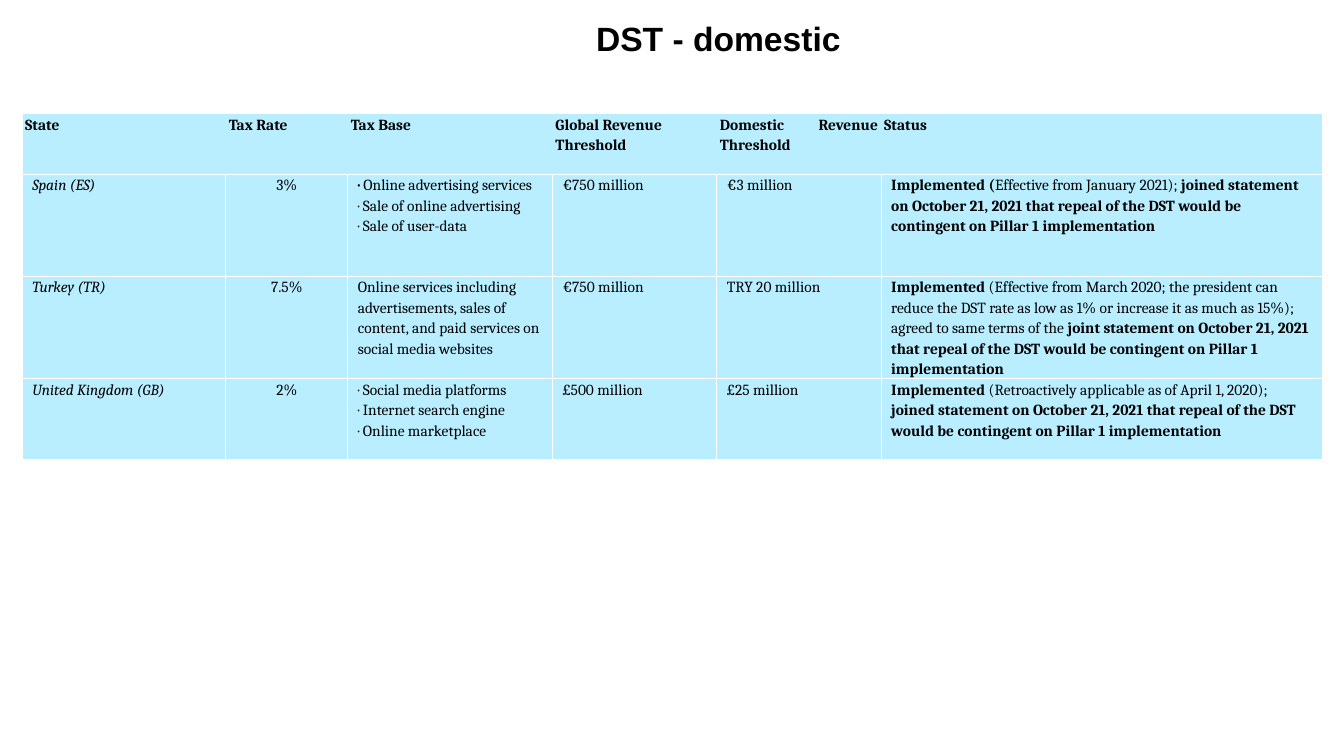
from dataclasses import dataclass

from lxml.etree import SubElement
from pptx import Presentation
from pptx.dml.color import RGBColor as Color
from pptx.enum.text import MSO_ANCHOR as Anchor, PP_ALIGN as Align
from pptx.oxml.ns import qn
from pptx.util import Inches, Pt


@dataclass(frozen=True)
class Theme:
    ink: str = "000000"
    fill: str = "B8EEFF"
    line: str = "FFFFFF"
    head: str = "Arial"
    body: str = "Cambria"
    big: int = 24
    small: int = 11


theme = Theme()


def style(run, font, size, bold, italic=False):
    run.font.name = font
    run.font.size = Pt(size)
    run.font.bold = bold
    run.font.italic = italic
    run.font.color.rgb = Color.from_string(theme.ink)


def border(cell, side, shown):
    line = SubElement(cell._tc.get_or_add_tcPr(), qn(f"a:ln{side}"), w=str(Pt(1)))
    if shown:
        solid = SubElement(line, qn("a:solidFill"))
        SubElement(solid, qn("a:srgbClr"), val=theme.line)
    else:
        SubElement(line, qn("a:noFill"))


prs = Presentation()
prs.slide_width, prs.slide_height = Inches(13.33), Inches(7.5)
slide = prs.slides.add_slide(prs.slide_layouts[5])

title = slide.shapes.title
title.left, title.top = Inches(1.09), Inches(0.02)
title.width, title.height = Inches(12.07), Inches(0.79)
frame = title.text_frame
frame.margin_left = frame.margin_right = frame.margin_top = frame.margin_bottom = 0
frame.vertical_anchor = Anchor.MIDDLE
frame.text = "DST - domestic"
para = frame.paragraphs[0]
para.alignment = Align.CENTER
para.line_spacing = Pt(24)
style(para.runs[0], theme.head, theme.big, True)

# Text between asterisks is bold.
joined = ("*joined statement on October 21, 2021 that repeal of the DST "
          "would be contingent on Pillar 1 implementation*")
rows = [
    ["*State*", "*Tax Rate*", "*Tax Base*", "*Global Revenue Threshold*",
     "*Domestic Revenue Threshold*", "*Status*"],
    ["Spain (ES)", "3%",
     "*· *Online advertising services\n· Sale of online advertising\n· Sale of user-data",
     "€750 million", "€3 million",
     "*Implemented (*Effective from January 2021); " + joined],
    ["Turkey (TR)", "7.5%",
     "Online services including advertisements, sales of content, "
     "and paid services on social media websites",
     "€750 million", "TRY 20 million",
     "*Implemented* (Effective from March 2020; the president can reduce the DST rate "
     "as low as 1% or increase it as much as 15%); agreed to same terms of the "
     + joined.replace("joined", "joint")],
    ["United Kingdom (GB)", "2%",
     "· Social media platforms\n· Internet search engine\n· Online marketplace",
     "£500 million", "£25 million",
     "*Implemented* (Retroactively applicable as of April 1, 2020); " + joined],
]
widths = [2.02, 1.21, 2.03, 1.63, 1.63, 4.38]
heights = [0.6, 1.01, 1.01, 0.8]

table = slide.shapes.add_table(
    len(rows), len(widths), Inches(0.22), Inches(1.13),
    Inches(sum(widths)), Inches(sum(heights))).table
table.first_row = table.horz_banding = False
for col, width in zip(table.columns, widths):
    col.width = Inches(width)
for row, height in zip(table.rows, heights):
    row.height = Inches(height)

last = len(widths) - 1
for r, texts in enumerate(rows):
    for c, text in enumerate(texts):
        cell = table.cell(r, c)
        cell.margin_left = cell.margin_right = Inches(0.1 if r else 0.03)
        cell.margin_top = cell.margin_bottom = 0
        border(cell, "L", r > 0 or c == 0)
        border(cell, "R", r > 0 or c == last)
        border(cell, "T", True)
        border(cell, "B", True)
        cell.fill.solid()
        cell.fill.fore_color.rgb = Color.from_string(theme.fill)

        para = cell.text_frame.paragraphs[0]
        para.line_spacing = 1.15
        if r == 0:
            para.alignment = Align.LEFT if c == 3 else Align.JUSTIFY
        else:
            para.alignment = Align.CENTER if c == 1 else Align.LEFT
        for n, line in enumerate(text.split("\n")):
            if n:
                para.add_line_break()
            for k, part in enumerate(line.split("*")):
                if part:
                    run = para.add_run()
                    run.text = part
                    style(run, theme.body, theme.small, k % 2 == 1, r > 0 and c == 0)

prs.save("out.pptx")
